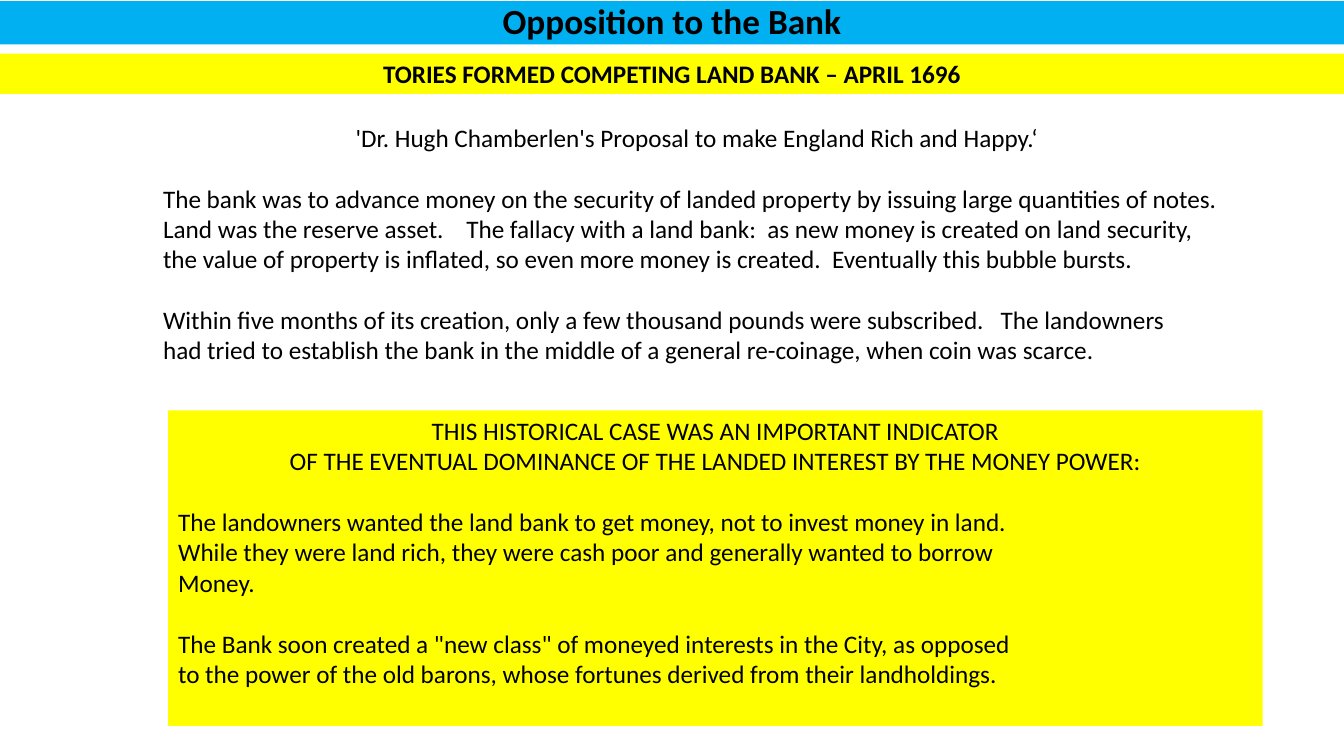
from dataclasses import dataclass

from pptx import Presentation
from pptx.dml.color import RGBColor
from pptx.enum.shapes import MSO_SHAPE
from pptx.enum.text import MSO_ANCHOR, MSO_AUTO_SIZE, PP_ALIGN
from pptx.shapes.autoshape import Shape
from pptx.slide import Slide
from pptx.util import Cm, Pt

COLOURS = {"title": "00B0F0", "highlight": "FFFF00", "text": "000000"}
FONT = "Calibri"
SLIDE_WIDTH = 33.87
BODY_SIZE = 18
BLOCK_GAP = 22  # points, one line of body text


@dataclass(frozen=True)
class Block:
    """Lines that stand together, set apart from the block above."""
    lines: tuple[str, ...]
    alignment: PP_ALIGN = PP_ALIGN.LEFT


@dataclass(frozen=True)
class Panel:
    """A text area, with its place in centimetres."""
    left: float
    top: float
    width: float
    height: float
    blocks: tuple[Block, ...]
    fill: str | None = None
    bold: bool = False


PANELS = (
    Panel(0, 1.35, SLIDE_WIDTH, 1.02, (
        Block(("TORIES FORMED COMPETING LAND BANK – APRIL 1696",), PP_ALIGN.CENTER),
    ), fill="highlight", bold=True),
    Panel(3.86, 2.95, 27.41, 6.4, (
        Block(("'Dr. Hugh Chamberlen's Proposal to make England Rich and Happy.‘",),
              PP_ALIGN.CENTER),
        Block((
            "The bank was to advance money on the security of landed property by issuing large quantities of notes.",
            "Land was the reserve asset.    The fallacy with a land bank:  as new money is created on land security,",
            "the value of property is inflated, so even more money is created.  Eventually this bubble bursts.",
        )),
        Block((
            "Within five months of its creation, only a few thousand pounds were subscribed.   The landowners",
            "had tried to establish the bank in the middle of a general re-coinage, when coin was scarce.",
        )),
    )),
    Panel(4.24, 10.34, 27.58, 7.95, (
        Block((
            "THIS HISTORICAL CASE WAS AN IMPORTANT INDICATOR",
            "OF THE EVENTUAL DOMINANCE OF THE LANDED INTEREST BY THE MONEY POWER:",
        ), PP_ALIGN.CENTER),
        Block((
            "The landowners wanted the land bank to get money, not to invest money in land.",
            "While they were land rich, they were cash poor and generally wanted to borrow",
            "Money.",
        )),
        Block((
            "The Bank soon created a \"new class\" of moneyed interests in the City, as opposed",
            "to the power of the old barons, whose fortunes derived from their landholdings.",
        )),
    ), fill="highlight"),
)


def colour(name: str) -> RGBColor:
    return RGBColor.from_string(COLOURS[name])


def fill_shape(shape: Shape, colour_name: str) -> None:
    shape.fill.solid()
    shape.fill.fore_color.rgb = colour(colour_name)


def format_paragraph(paragraph, size: float, bold: bool, alignment: PP_ALIGN) -> None:
    paragraph.alignment = alignment
    paragraph.font.name = FONT
    paragraph.font.size = Pt(size)
    paragraph.font.bold = bold
    paragraph.font.color.rgb = colour("text")


def set_title(slide: Slide, text: str) -> None:
    title = slide.shapes.title
    title.left, title.top = Cm(0), Cm(0.03)
    title.width, title.height = Cm(SLIDE_WIDTH), Cm(1.09)
    fill_shape(title, "title")
    frame = title.text_frame
    frame.text = text
    frame.auto_size = MSO_AUTO_SIZE.NONE
    frame.vertical_anchor = MSO_ANCHOR.MIDDLE
    paragraph = frame.paragraphs[0]
    format_paragraph(paragraph, 25.2, True, PP_ALIGN.CENTER)
    paragraph.line_spacing = 0.9


def add_panel(slide: Slide, panel: Panel) -> None:
    place = [Cm(length) for length in (panel.left, panel.top, panel.width, panel.height)]
    if panel.fill:
        shape = slide.shapes.add_shape(MSO_SHAPE.RECTANGLE, *place)
        shape.shadow.inherit = False
        shape.line.fill.background()
        fill_shape(shape, panel.fill)
    else:
        shape = slide.shapes.add_textbox(*place)
    frame = shape.text_frame
    frame.word_wrap = True
    frame.vertical_anchor = MSO_ANCHOR.TOP
    lines = [(block, line) for block in panel.blocks for line in block.lines]
    frame.text = "\n".join(line for _, line in lines)
    previous = panel.blocks[0]
    for paragraph, (block, _) in zip(frame.paragraphs, lines):
        format_paragraph(paragraph, BODY_SIZE, panel.bold, block.alignment)
        if block is not previous:
            paragraph.space_before = Pt(BLOCK_GAP)
        previous = block


def main() -> None:
    presentation = Presentation()
    presentation.slide_width, presentation.slide_height = Cm(SLIDE_WIDTH), Cm(19.05)
    title_only = presentation.slide_layouts.get_by_name("Title Only")
    slide = presentation.slides.add_slide(title_only)
    set_title(slide, "Opposition to the Bank")
    for panel in PANELS:
        add_panel(slide, panel)
    presentation.save("out.pptx")


if __name__ == "__main__":
    main()
